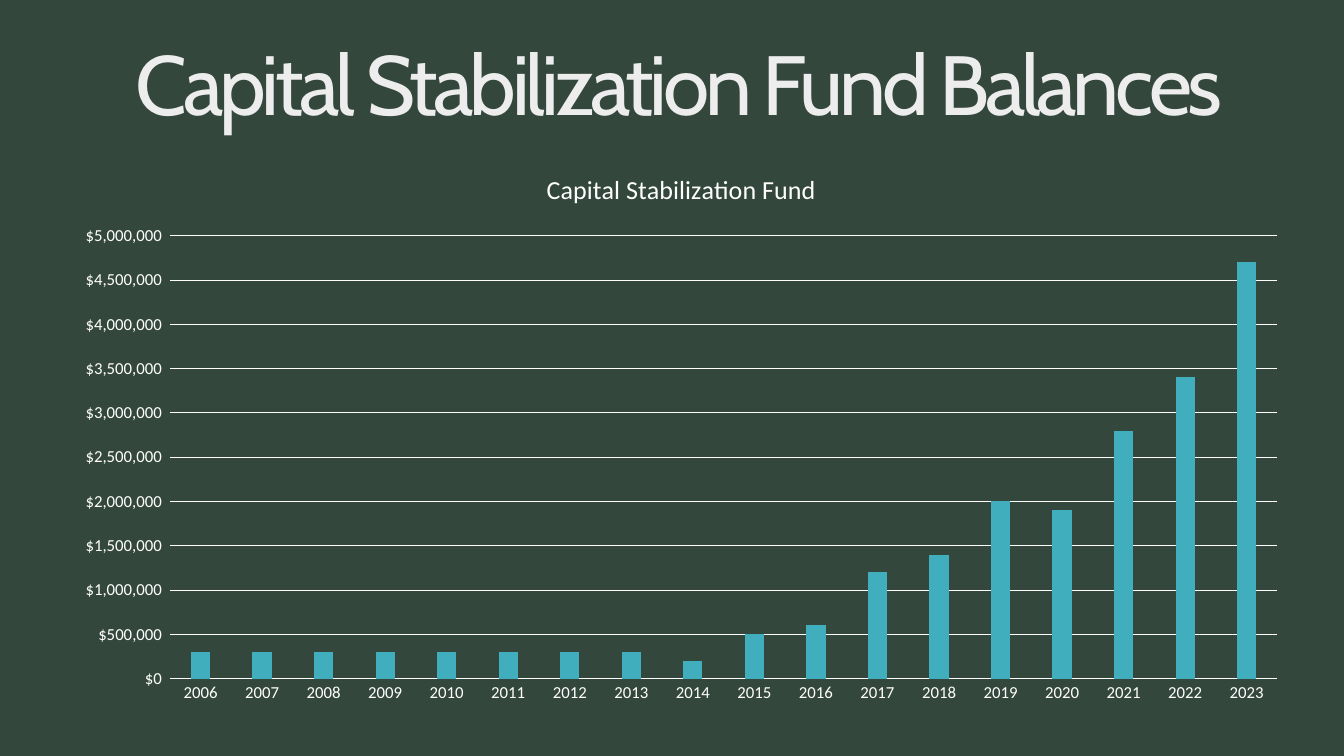
from pptx import Presentation
from pptx.chart.data import CategoryChartData
from pptx.dml.color import RGBColor
from pptx.enum.chart import XL_CHART_TYPE, XL_TICK_MARK
from pptx.enum.text import MSO_ANCHOR, PP_ALIGN
from pptx.util import Cm, Pt

FIRST_YEAR = 2006
BALANCES = [
    300000, 300000, 300000, 300000, 300000, 300000, 300000, 300000, 200000,
    500000, 600000, 1200000, 1400000, 2000000, 1900000, 2800000, 3400000, 4700000,
]


def color(hex_text):
    return RGBColor.from_string(hex_text)


def style_font(font, name, size, hex_text):
    font.name = name
    font.size = Pt(size)
    font.bold = False
    font.color.rgb = color(hex_text)


def style_line(line, hex_text):
    line.color.rgb = color(hex_text)
    line.width = Pt(0.75)


def add_title(slide, left, top, width, height):
    title = slide.shapes.title
    title.left, title.top, title.width, title.height = left, top, width, height
    frame = title.text_frame
    frame.text = "Capital Stabilization Fund Balances"
    frame.word_wrap = True
    frame.vertical_anchor = MSO_ANCHOR.MIDDLE
    paragraph = frame.paragraphs[0]
    paragraph.alignment = PP_ALIGN.CENTER
    paragraph.line_spacing = 0.9
    style_font(paragraph.font, "Cabin", 60, "EDEDED")
    # Letter spacing is in hundredths of a point
    paragraph.runs[0]._r.get_or_add_rPr().set("spc", "-300")


def add_balance_chart(slide, left, top, width, height):
    data = CategoryChartData()
    data.categories = [str(FIRST_YEAR + i) for i in range(len(BALANCES))]
    data.add_series("Series 1", BALANCES)
    chart = slide.shapes.add_chart(
        XL_CHART_TYPE.COLUMN_CLUSTERED, left, top, width, height, data
    ).chart
    style_font(chart.font, "Calibri", 10, "FFFFFF")
    chart.has_legend = False

    chart.has_title = True
    chart.chart_title.include_in_layout = False
    chart.chart_title.text_frame.text = "Capital Stabilization Fund"
    style_font(chart.chart_title.text_frame.paragraphs[0].font, "Calibri", 18.6, "FFFFFF")

    for axis in (chart.category_axis, chart.value_axis):
        axis.major_tick_mark = axis.minor_tick_mark = XL_TICK_MARK.NONE
        style_font(axis.tick_labels.font, "Calibri", 12, "FFFFFF")
    style_line(chart.category_axis.format.line, "FFFFFF")

    value_axis = chart.value_axis
    value_axis.minimum_scale, value_axis.maximum_scale = 0, 5000000
    value_axis.major_unit = 500000
    value_axis.format.line.fill.background()
    style_line(value_axis.major_gridlines.format.line, "FFFFFF")
    value_axis.tick_labels.number_format = '"$"#,##0_);\\("$"#,##0\\)'
    value_axis.tick_labels.number_format_is_linked = False

    plot = chart.plots[0]
    plot.gap_width, plot.overlap = 219, -27
    plot.vary_by_categories = False
    fill = plot.series[0].format.fill
    fill.solid()
    fill.fore_color.rgb = color("41AEBD")


def main():
    presentation = Presentation()
    presentation.slide_width, presentation.slide_height = Cm(33.87), Cm(19.05)
    slide = presentation.slides.add_slide(presentation.slide_layouts[5])
    slide.background.fill.solid()
    slide.background.fill.fore_color.rgb = color("34473D")
    add_title(slide, Cm(0.36), Cm(0.38), Cm(33.5), Cm(3.68))
    add_balance_chart(slide, Cm(1.53), Cm(3.77), Cm(31.29), Cm(14.22))
    presentation.save("out.pptx")


if __name__ == "__main__":
    main()
